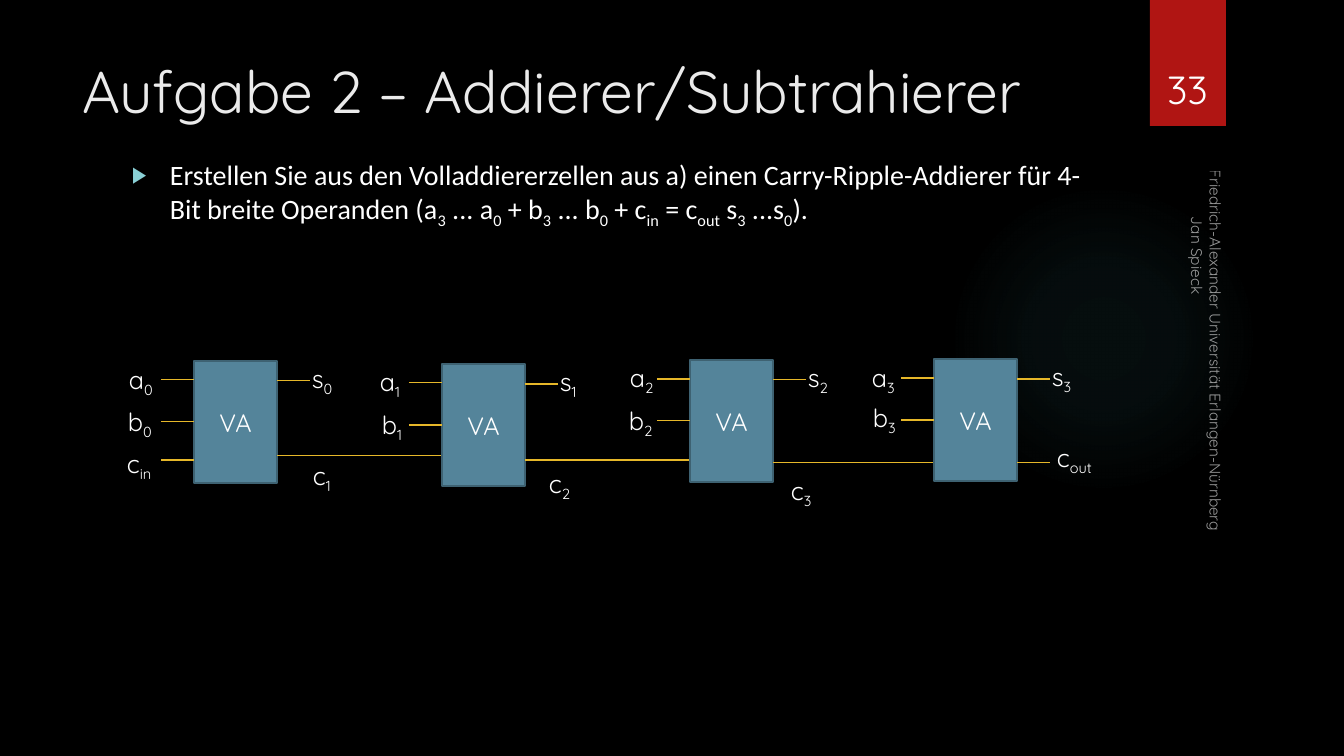
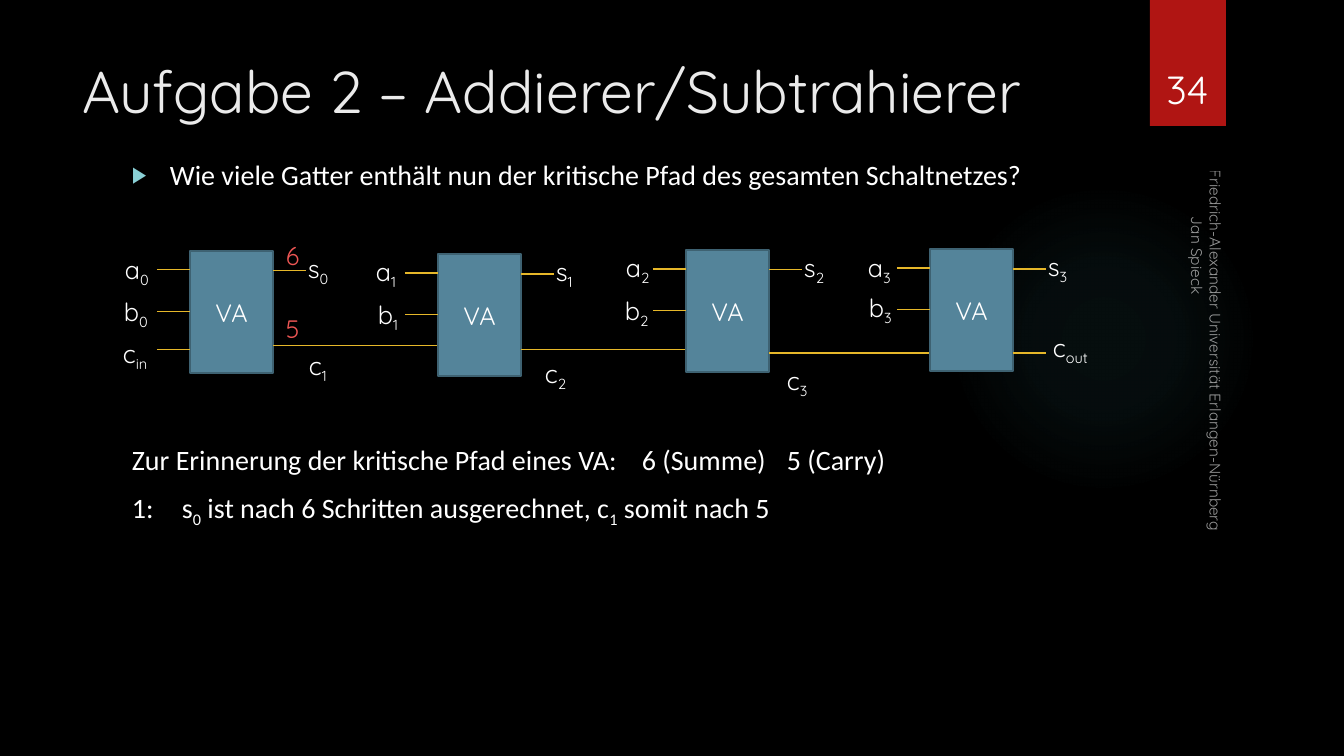
from dataclasses import dataclass

from lxml.etree import SubElement
from pptx import Presentation
from pptx.dml.color import RGBColor
from pptx.enum.shapes import MSO_CONNECTOR, MSO_SHAPE
from pptx.enum.text import MSO_ANCHOR, MSO_AUTO_SIZE, PP_ALIGN
from pptx.oxml import parse_xml
from pptx.oxml.ns import nsdecls, qn
from pptx.util import Emu, Pt

PX_PER_INCH = 100.8
HEADING_FONT, BODY_FONT = "Quicksand", "Calibri"
WHITE, TITLE_COLOR, BLACK = "FFFFFF", "EBEBEB", "000000"
BAND_RED, STEP_RED, GLOW, BULLET = "B01513", "ED5654", "50B9C1", "8AD0D6"
CELL_FILL, CELL_LINE, WIRE = "54849A", "3E6272", "E6B729"

TITLE = "Aufgabe 2 – Addierer/Subtrahierer"
FOOTER = ("Friedrich-Alexander Universität Erlangen-Nürnberg", "Jan Spieck")
CELL_WIDTH, CELL_HEIGHT, STUB = 83, 122, 33


@dataclass
class Adder:
    """One full adder; label positions are left and top in px."""
    left: int
    top: int
    a: tuple
    b: tuple
    total: tuple
    carry: tuple
    carry_y: int


ADDERS = (
    Adder(194, 361, (119, 359), (118, 401), (302, 358), (303, 455), 456),
    Adder(442, 364, (370, 361), (372, 404), (550, 361), (539, 463), 460),
    Adder(690, 360, (620, 357), (619, 400), (798, 357), (781, 470), 463),
    Adder(934, 359, (862, 357), (863, 397), (1042, 356), (1047, 437), 463),
)


def px(value):
    return Emu(round(value * 914400 / PX_PER_INCH))


def rgb(value):
    return RGBColor.from_string(value)


def add_runs(paragraph, text, size, color=WHITE, font=HEADING_FONT):
    """Add text run by run; every second part between bars is subscript."""
    for index, part in enumerate(text.split("|")):
        if not part:
            continue
        run = paragraph.add_run()
        run.text = part
        run.font.size = Pt(size)
        run.font.name = font
        run.font.color.rgb = rgb(color)
        if index % 2:
            run.font._element.set("baseline", "-25000")


def add_text_box(slide, left, top, width, height, anchor=MSO_ANCHOR.TOP):
    box = slide.shapes.add_textbox(px(left), px(top), px(width), px(height))
    box.text_frame.word_wrap = True
    box.text_frame.vertical_anchor = anchor
    return box


def add_label(slide, left, top, text, color=WHITE):
    box = add_text_box(slide, left, top, 64, 40)
    add_runs(box.text_frame.paragraphs[0], text, 18, color)


def add_plain_shape(slide, kind, left, top, width, height):
    shape = slide.shapes.add_shape(kind, px(left), px(top), px(width), px(height))
    shape.shadow.inherit = False
    shape.line.fill.background()
    return shape


def add_wire(slide, x1, x2, y):
    wire = slide.shapes.add_connector(
        MSO_CONNECTOR.STRAIGHT, px(x1), px(y), px(x2), px(y))
    wire.line.color.rgb = rgb(WIRE)
    wire.line.width = Pt(0.75)
    SubElement(wire._element.spPr, qn("a:effectLst"))
    return wire


def add_glow(slide):
    glow = add_plain_shape(slide, MSO_SHAPE.OVAL, 949, 184, 310, 310)
    stops = "".join(
        f'<a:gs pos="{position}000"><a:srgbClr val="{GLOW}">'
        f'<a:alpha val="{alpha}000"/></a:srgbClr></a:gs>'
        for position, alpha in ((0, 7), (36, 6), (69, 0)))
    gradient = parse_xml(
        f'<a:gradFill {nsdecls("a")} rotWithShape="1"><a:gsLst>{stops}</a:gsLst>'
        '<a:path path="circle"><a:fillToRect l="50000" t="50000" r="50000" '
        'b="50000"/></a:path></a:gradFill>')
    properties = glow._element.spPr
    properties.find(qn("a:prstGeom")).addnext(gradient)


def add_footer(slide):
    box = add_text_box(slide, 987, 356, 425, 33, MSO_ANCHOR.BOTTOM)
    box.rotation = 90
    frame = box.text_frame
    for index, text in enumerate(FOOTER):
        paragraph = frame.add_paragraph() if index else frame.paragraphs[0]
        if index:
            paragraph._p.get_or_add_pPr().set("marL", str(px(47)))
        add_runs(paragraph, text, 11)
        for color in paragraph._p.iter(qn("a:srgbClr")):
            SubElement(color, qn("a:alpha")).set("val", "60000")


def add_base_slide(presentation, number):
    """Title, glow, red band, page number and footer."""
    slide = presentation.slides.add_slide(presentation.slide_layouts[5])
    add_glow(slide)
    band = add_plain_shape(slide, MSO_SHAPE.RECTANGLE, 1150, 0, 76, 126)
    band.fill.solid()
    band.fill.fore_color.rgb = rgb(BAND_RED)

    title = slide.shapes.title
    title.left, title.top, title.width, title.height = map(px, (72, 50, 1037, 154))
    frame = title.text_frame
    frame.auto_size = MSO_AUTO_SIZE.NONE
    frame.vertical_anchor = MSO_ANCHOR.TOP
    frame.paragraphs[0].alignment = PP_ALIGN.LEFT
    add_runs(frame.paragraphs[0], TITLE, 42, TITLE_COLOR)

    add_footer(slide)
    page = add_text_box(slide, 1141, 32, 93, 85, MSO_ANCHOR.BOTTOM)
    page.text_frame.paragraphs[0].alignment = PP_ALIGN.CENTER
    add_runs(page.text_frame.paragraphs[0], str(number), 28)
    return slide


def add_bullet(slide, text):
    box = add_text_box(slide, 122, 153, 986, 80)
    paragraph = box.text_frame.paragraphs[0]
    properties = paragraph._p.get_or_add_pPr()
    properties.set("marL", str(px(38)))
    properties.set("indent", str(-px(38)))
    color = SubElement(properties, qn("a:buClr"))
    SubElement(color, qn("a:srgbClr")).set("val", BULLET)
    SubElement(properties, qn("a:buSzPct")).set("val", "80000")
    SubElement(properties, qn("a:buFont")).set("typeface", "Arial")
    SubElement(properties, qn("a:buChar")).set("char", "▶")
    add_runs(paragraph, text, 20, font=BODY_FONT)


def add_tabbed_lines(slide, top, lines):
    """Lines given as (text, tab stops in px)."""
    frame = add_text_box(slide, 122, top, 986, 100).text_frame
    for index, (text, stops) in enumerate(lines):
        paragraph = frame.add_paragraph() if index else frame.paragraphs[0]
        tabs = SubElement(paragraph._p.get_or_add_pPr(), qn("a:tabLst"))
        for stop in stops:
            tab = SubElement(tabs, qn("a:tab"))
            tab.set("pos", str(px(stop)))
            tab.set("algn", "l")
        if index:
            paragraph.space_before = Pt(10)
        add_runs(paragraph, text, 20, font=BODY_FONT)


def add_cell(slide, left, top):
    cell = add_plain_shape(
        slide, MSO_SHAPE.RECTANGLE, left, top, CELL_WIDTH, CELL_HEIGHT)
    cell.fill.solid()
    cell.fill.fore_color.rgb = rgb(CELL_FILL)
    cell.line.color.rgb = rgb(CELL_LINE)
    cell.line.width = Pt(1.5)
    cell.text_frame.vertical_anchor = MSO_ANCHOR.MIDDLE
    paragraph = cell.text_frame.paragraphs[0]
    paragraph.alignment = PP_ALIGN.CENTER
    add_runs(paragraph, "VA", 18)
    return cell


def add_carry_ripple_adder(slide, dx=0, dy=0):
    """Chain of full adders, moved by dx and dy."""
    last = len(ADDERS) - 1
    for index, adder in enumerate(ADDERS):
        left, top = adder.left + dx, adder.top + dy
        right = left + CELL_WIDTH
        cell = add_cell(slide, left, top)

        # Inputs and sum
        add_wire(slide, left - STUB, left, top + 19)
        middle_wire = add_wire(slide, left - STUB, left, top + CELL_HEIGHT / 2)
        middle_wire.end_connect(cell, 1)
        add_wire(slide, right, right + STUB, top + 20)

        # Carry to the next cell or out of the chain
        carry_end = right + STUB if index == last else ADDERS[index + 1].left + dx
        add_wire(slide, right, carry_end, adder.carry_y + dy)

        carry_name = "out" if index == last else index + 1
        for (x, y), text in ((adder.a, f"a|{index}"), (adder.b, f"b|{index}"),
                             (adder.total, f"s|{index}"),
                             (adder.carry, f"c|{carry_name}")):
            add_label(slide, x + dx, y + dy, text)

    # Carry into the first cell
    first_left = ADDERS[0].left + dx
    add_wire(slide, first_left - STUB, first_left, 460 + dy)
    add_label(slide, 117 + dx, 443 + dy, "c|in")


def main():
    presentation = Presentation()
    presentation.slide_width, presentation.slide_height = px(1344), px(756)
    background = presentation.slide_master.background.fill
    background.solid()
    background.fore_color.rgb = rgb(BLACK)

    # Task
    slide = add_base_slide(presentation, 33)
    add_bullet(slide, "Erstellen Sie aus den Volladdiererzellen aus a) einen "
                      "Carry-Ripple-Addierer für 4-Bit breite Operanden "
                      "(a|3| ... a|0| + b|3| ... b|0| + c|in| = c|out| s|3| ...s|0|).")
    add_carry_ripple_adder(slide)

    # Critical path
    slide = add_base_slide(presentation, 34)
    add_bullet(slide, "Wie viele Gatter enthält nun der kritische Pfad des "
                      "gesamten Schaltnetzes?")
    add_carry_ripple_adder(slide, -4, -110)
    for top, steps in ((235, "6"), (308, "5")):
        add_label(slide, 276, top, steps, STEP_RED)
    add_tabbed_lines(slide, 438, (
        ("Zur Erinnerung der kritische Pfad eines VA:\t6 (Summe)\t5 (Carry)",
         (510, 655)),
        ("1:\ts|0| ist nach 6 Schritten ausgerechnet, c|1| somit nach 5", (50,)),
    ))

    presentation.save("out.pptx")


if __name__ == "__main__":
    main()
